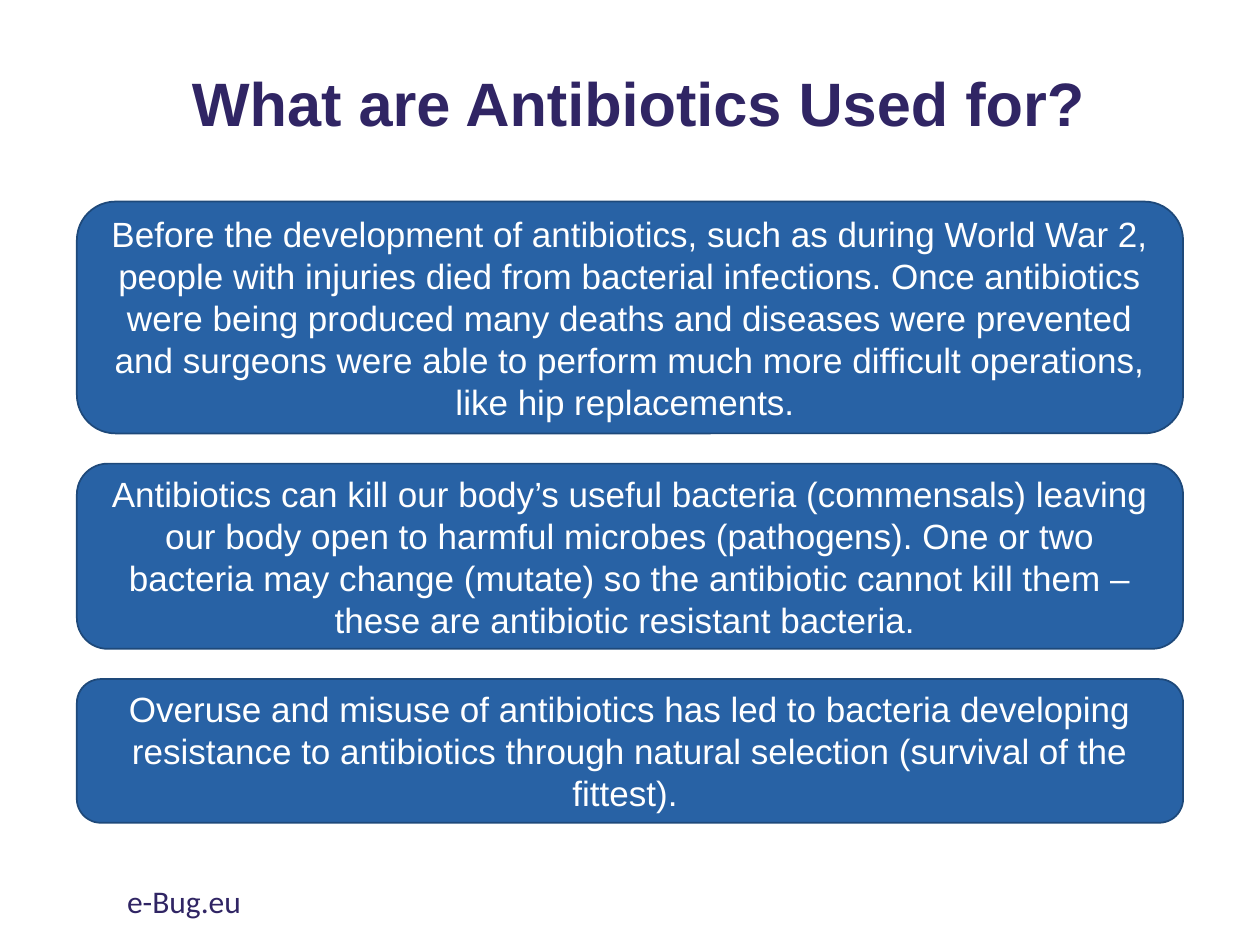
import pptx
import pptx.util
import pptx.dml.color
import pptx.enum.shapes
import pptx.enum.text
from dataclasses import dataclass

Inches = pptx.util.Inches
Pt = pptx.util.Pt
RGBColor = pptx.dml.color.RGBColor
PP_ALIGN = pptx.enum.text.PP_ALIGN
MSO_ANCHOR = pptx.enum.text.MSO_ANCHOR


@dataclass(frozen=True)
class Theme:
    ink: RGBColor = RGBColor.from_string("302564")
    panel: RGBColor = RGBColor.from_string("2862A5")
    outline: RGBColor = RGBColor.from_string("1E497A")
    white: RGBColor = RGBColor.from_string("FFFFFF")
    font: str = "Arial"
    footer_font: str = "Calibri"
    title_size: Pt = Pt(35)
    panel_size: Pt = Pt(20)
    footer_size: Pt = Pt(18)


theme = Theme()


def write(frame, text, font, size, color, align, anchor, bold=False):
    frame.word_wrap = True
    frame.vertical_anchor = anchor
    paragraph = frame.paragraphs[0]
    paragraph.alignment = align
    run = paragraph.add_run()
    run.text = text
    run.font.name = font
    run.font.size = size
    run.font.bold = bold
    run.font.color.rgb = color
    return paragraph


deck = pptx.Presentation()
deck.slide_width, deck.slide_height = Inches(10), Inches(7.5)
slide = deck.slides.add_slide(deck.slide_layouts[5])

# Title
title = slide.shapes.title
title.left, title.top = Inches(0.76), Inches(0.39)
title.width, title.height = Inches(8.62), Inches(0.91)
heading = write(title.text_frame, "What are Antibiotics Used for?", theme.font,
                theme.title_size, theme.ink, PP_ALIGN.CENTER, MSO_ANCHOR.MIDDLE, bold=True)
heading.line_spacing = 0.9

# Stacked panels: height in inches and statement
statements = [
    (1.84, "Before the development of antibiotics, such as during World War 2, people with "
           "injuries died from bacterial infections. Once antibiotics were being produced many "
           "deaths and diseases were prevented and surgeons were able to perform much more "
           "difficult operations, like hip replacements. "),
    (1.47, "Antibiotics can kill our body’s useful bacteria (commensals) leaving our body open "
           "to harmful microbes (pathogens). One or two bacteria may change (mutate) so the "
           "antibiotic cannot kill them – these are antibiotic resistant bacteria. "),
    (1.14, "Overuse and misuse of antibiotics has led to bacteria developing resistance to "
           "antibiotics through natural selection (survival of the fittest). "),
]
panel_gap = 0.24
panel_top = 1.6
for panel_height, statement in statements:
    panel = slide.shapes.add_shape(
        pptx.enum.shapes.MSO_SHAPE.ROUNDED_RECTANGLE,
        Inches(0.61), Inches(panel_top), Inches(8.78), Inches(panel_height))
    panel.shadow.inherit = False
    panel.fill.solid()
    panel.fill.fore_color.rgb = theme.panel
    panel.line.color.rgb = theme.outline
    panel.line.width = Pt(1)
    write(panel.text_frame, statement, theme.font, theme.panel_size, theme.white,
          PP_ALIGN.CENTER, MSO_ANCHOR.MIDDLE)
    panel_top += panel_height + panel_gap

# Footer web address
footer = slide.shapes.add_textbox(Inches(0.91), Inches(6.95), Inches(3.38), Inches(0.4))
write(footer.text_frame, "e-Bug.eu", theme.footer_font, theme.footer_size, theme.ink,
      PP_ALIGN.LEFT, MSO_ANCHOR.TOP)

deck.save("out.pptx")
